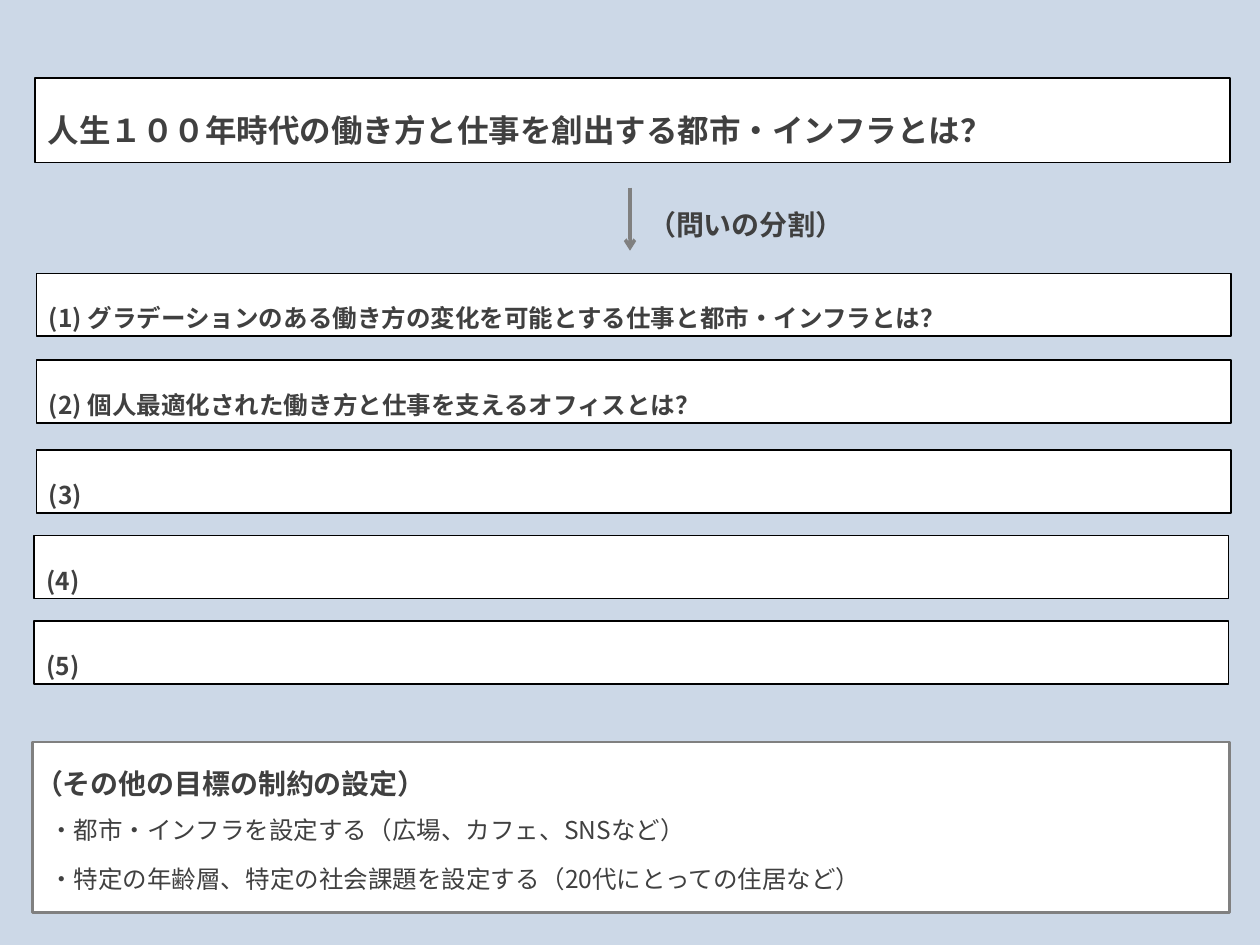
from typing import NamedTuple

from lxml.etree import SubElement
from pptx import Presentation
from pptx.dml.color import RGBColor
from pptx.enum.shapes import MSO_CONNECTOR, MSO_SHAPE
from pptx.enum.text import MSO_ANCHOR, MSO_AUTO_SIZE, PP_ALIGN
from pptx.oxml.ns import qn
from pptx.util import Inches, Pt

COLORS = {"bg": "CCD8E7", "box": "FFFFFF", "edge": "000000",
          "gray": "808080", "text": "404040"}
FONT = "Noto Sans CJK JP"


class Box(NamedTuple):
    left: float
    top: float
    width: float
    height: float


class Question(NamedTuple):
    left: float
    top: float
    text: str


QUESTIONS = [
    Question(0.29, 2.17, "(1) グラデーションのある働き方の変化を可能とする仕事と都市・インフラとは？"),
    Question(0.29, 2.86, "(2) 個人最適化された働き方と仕事を支えるオフィスとは？"),
    Question(0.29, 3.57, "(3)"),
    Question(0.27, 4.25, "(4)"),
    Question(0.27, 4.93, "(5)"),
]
CONSTRAINTS = ["・都市・インフラを設定する（広場、カフェ、SNSなど）",
               "・特定の年齢層、特定の社会課題を設定する（20代にとっての住居など）"]


def rgb(name: str) -> RGBColor:
    return RGBColor.from_string(COLORS[name])


def place(sp, box: Box) -> None:
    for name, value in box._asdict().items():
        setattr(sp, name, Inches(value))


def paint(sp, edge: str = "edge", weight: float = 1) -> None:
    sp.fill.solid()
    sp.fill.fore_color.rgb = rgb("box")
    sp.line.color.rgb = rgb(edge)
    sp.line.width = Pt(weight)


def write(sp, lines: list[str], size: float, bold: bool = True,
          spacing: float = 32, align=PP_ALIGN.LEFT) -> None:
    tf = sp.text_frame
    frame_format = {"word_wrap": True, "auto_size": MSO_AUTO_SIZE.NONE,
                    "vertical_anchor": MSO_ANCHOR.MIDDLE}
    for name, value in frame_format.items():
        setattr(tf, name, value)
    para_format = {"alignment": align, "line_spacing": Pt(spacing),
                   "space_before": Pt(0), "space_after": Pt(0)}
    font_format = {"size": Pt(size), "bold": bold, "name": FONT}
    for i, line in enumerate(lines):
        p = tf.paragraphs[0] if i == 0 else tf.add_paragraph()
        for name, value in para_format.items():
            setattr(p, name, value)
        r = p.add_run()
        r.text = line
        for name, value in font_format.items():
            setattr(r.font, name, value)
        r.font.color.rgb = rgb("text")
        SubElement(r.font._element, qn("a:ea"), typeface=FONT)


def add_box(s, box: Box, edge: str = "edge", weight: float = 1):
    sp = s.shapes.add_shape(MSO_SHAPE.RECTANGLE, *map(Inches, box))
    sp.shadow.inherit = False
    paint(sp, edge, weight)
    return sp


def add_label(s, box: Box, text: str, align=PP_ALIGN.LEFT) -> None:
    write(s.shapes.add_textbox(*map(Inches, box)), [text], 16, align=align)


def add_down_arrow(s, x: float, top: float, bottom: float) -> None:
    arrow = s.shapes.add_connector(MSO_CONNECTOR.STRAIGHT, Inches(x), Inches(top),
                                   Inches(x), Inches(bottom))
    arrow.line.color.rgb = rgb("gray")
    arrow.line.width = Pt(2)
    SubElement(arrow.line._get_or_add_ln(), qn("a:tailEnd"), type="arrow")
    SubElement(arrow._element.spPr, qn("a:effectLst"))


def add_list(s, body, box: Box, lines: list[str]) -> None:
    place(body, box)
    write(body, lines, 14, bold=False, spacing=28)
    for p in body.text_frame.paragraphs:
        pPr = p._p.get_or_add_pPr()
        pPr.set("marL", "0")
        pPr.set("indent", "0")
        SubElement(pPr, qn("a:buNone"))
    s.shapes._spTree.append(body._element)  # bring in front of its panel


def main() -> None:
    prs = Presentation()
    prs.slide_width, prs.slide_height = Inches(10), Inches(7.5)
    s = prs.slides.add_slide(prs.slide_layouts[1])
    s.background.fill.solid()
    s.background.fill.fore_color.rgb = rgb("bg")

    # Main question
    title = s.shapes.title
    place(title, Box(0.28, 0.62, 9.48, 0.67))
    paint(title)
    write(title, ["人生１００年時代の働き方と仕事を創出する都市・インフラとは？"], 18)

    # Split into sub-questions
    add_down_arrow(s, 5, 1.49, 1.99)
    add_label(s, Box(4.92, 1.45, 2, 0.48), "（問いの分割）", PP_ALIGN.CENTER)
    for q in QUESTIONS:
        write(add_box(s, Box(q.left, q.top, 9.48, 0.5)), [q.text], 14)

    # Other constraints
    add_box(s, Box(0.26, 5.89, 9.5, 1.35), "gray", 1.5)
    add_list(s, s.placeholders[1], Box(0.29, 6.16, 9.36, 1.08), CONSTRAINTS)
    add_label(s, Box(0.18, 5.89, 7.43, 0.48), "（その他の目標の制約の設定）")

    prs.save("out.pptx")


if __name__ == "__main__":
    main()
